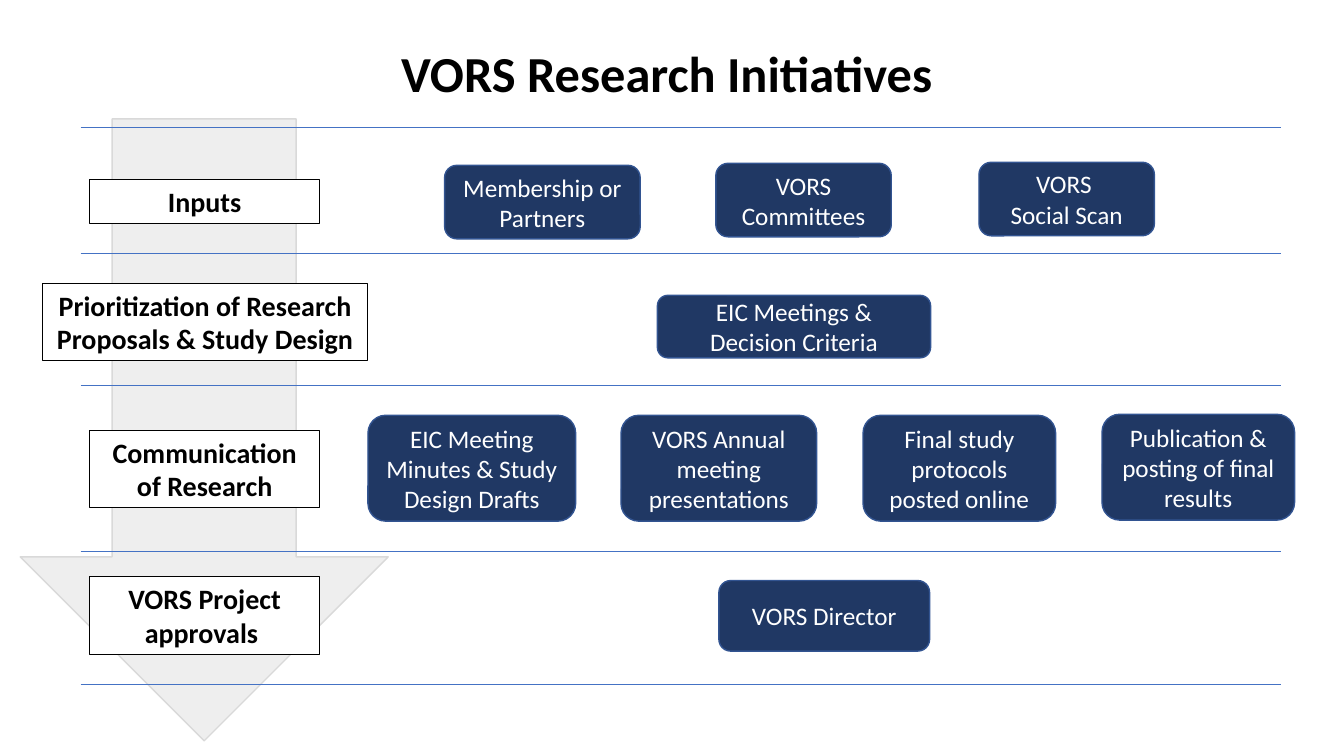
import pptx
import pptx.dml.color
import pptx.enum.shapes
import pptx.enum.text
import pptx.oxml
import pptx.oxml.ns
import pptx.util
from pptx.util import Inches

SHAPES = pptx.enum.shapes.MSO_SHAPE
ANCHOR = pptx.enum.text.MSO_ANCHOR


def color(hex_string):
    return pptx.dml.color.RGBColor.from_string(hex_string)


def add_box(kind, bounds, fill, line, width, lines=(), size=18, font_color="FFFFFF",
            bold=False, anchor=ANCHOR.MIDDLE):
    """Add a filled, outlined shape with one centred paragraph per line."""
    shape = slide.shapes.add_shape(kind, *[Inches(length) for length in bounds])
    shape.shadow.inherit = False
    shape.fill.solid()
    shape.fill.fore_color.rgb = color(fill)
    shape.line.color.rgb = color(line)
    shape.line.width = pptx.util.Pt(width)
    frame = shape.text_frame
    frame.word_wrap = True
    frame.vertical_anchor = anchor
    for index, text in enumerate(lines):
        paragraph = frame.add_paragraph() if index else frame.paragraphs[0]
        paragraph.alignment = pptx.enum.text.PP_ALIGN.CENTER
        run = paragraph.add_run()
        run.text = text
        run.font.name = "Calibri"
        run.font.size = pptx.util.Pt(size)
        run.font.bold = bold
        run.font.color.rgb = color(font_color)
    return shape


presentation = pptx.Presentation()
presentation.slide_width = Inches(13.33)
presentation.slide_height = Inches(7.5)
slide = presentation.slides.add_slide(presentation.slide_layouts[5])

# Title
title = slide.shapes.title
title.left, title.top = Inches(2.55), Inches(0.44)
title.width, title.height = Inches(8.24), Inches(0.82)
title.text_frame.word_wrap = True
title.text_frame.vertical_anchor = ANCHOR.TOP
paragraph = title.text_frame.paragraphs[0]
paragraph.alignment = pptx.enum.text.PP_ALIGN.CENTER
paragraph.line_spacing = 0.9
run = paragraph.add_run()
run.text = "VORS Research Initiatives "
run.font.name = "Calibri"
run.font.size = pptx.util.Pt(36)
run.font.bold = True
run.font.color.rgb = color("000000")

# Translucent arrow behind the stages
arrow = add_box(SHAPES.DOWN_ARROW, (0.2, 1.18, 3.65, 6.17), "BFBFBF", "D9D9D9", 1)
arrow_color = arrow.fill._xPr.find(".//" + pptx.oxml.ns.qn("a:srgbClr"))
arrow_color.append(pptx.oxml.parse_xml(
    f'<a:alpha {pptx.oxml.ns.nsdecls("a")} val="26000"/>'))

# Stage labels: left, top, width, height, text
stages = [
    (0.89, 1.78, 2.28, 0.44, "Inputs"),
    (0.42, 2.81, 3.23, 0.77, "Prioritization of Research Proposals & Study Design"),
    (0.89, 4.27, 2.28, 0.77, "Communication of Research"),
    (0.89, 5.72, 2.28, 0.77, "VORS Project approvals "),
]
for *bounds, text in stages:
    add_box(SHAPES.RECTANGLE, bounds, "FFFFFF", "000000", 0.75, [text],
            size=20, font_color="000000", bold=True, anchor=ANCHOR.TOP)

# Activities of each stage: left, top, width, height, paragraphs
activities = [
    (4.41, 1.64, 1.94, 0.73, ["Membership or Partners"]),
    (7.1, 1.62, 1.74, 0.73, ["VORS Committees"]),
    (9.71, 1.61, 1.74, 0.73, ["VORS ", "Social Scan"]),
    (6.52, 2.93, 2.71, 0.62, ["EIC Meetings & Decision Criteria"]),
    (3.65, 4.12, 2.06, 1.05, ["EIC Meeting Minutes & Study Design Drafts"]),
    (6.16, 4.12, 1.94, 1.05, ["VORS Annual meeting presentations"]),
    (8.56, 4.12, 1.91, 1.05, ["Final study protocols posted online"]),
    (10.93, 4.11, 1.91, 1.05, ["Publication & posting of final results"]),
    (7.13, 5.76, 2.09, 0.7, ["VORS Director"]),
]
for *bounds, lines in activities:
    add_box(SHAPES.ROUNDED_RECTANGLE, bounds, "203864", "325491", 1, lines)

# Lines between the stages
for top in (1.26, 2.51, 3.82, 5.47, 6.79):
    divider = slide.shapes.add_connector(
        pptx.enum.shapes.MSO_CONNECTOR.STRAIGHT,
        Inches(0.8), Inches(top), Inches(12.71), Inches(top))
    divider.line.color.rgb = color("4472C4")
    divider.line.width = pptx.util.Pt(0.5)
    divider._element.spPr.append(pptx.oxml.parse_xml(
        f'<a:effectLst {pptx.oxml.ns.nsdecls("a")}/>'))

presentation.save("out.pptx")
